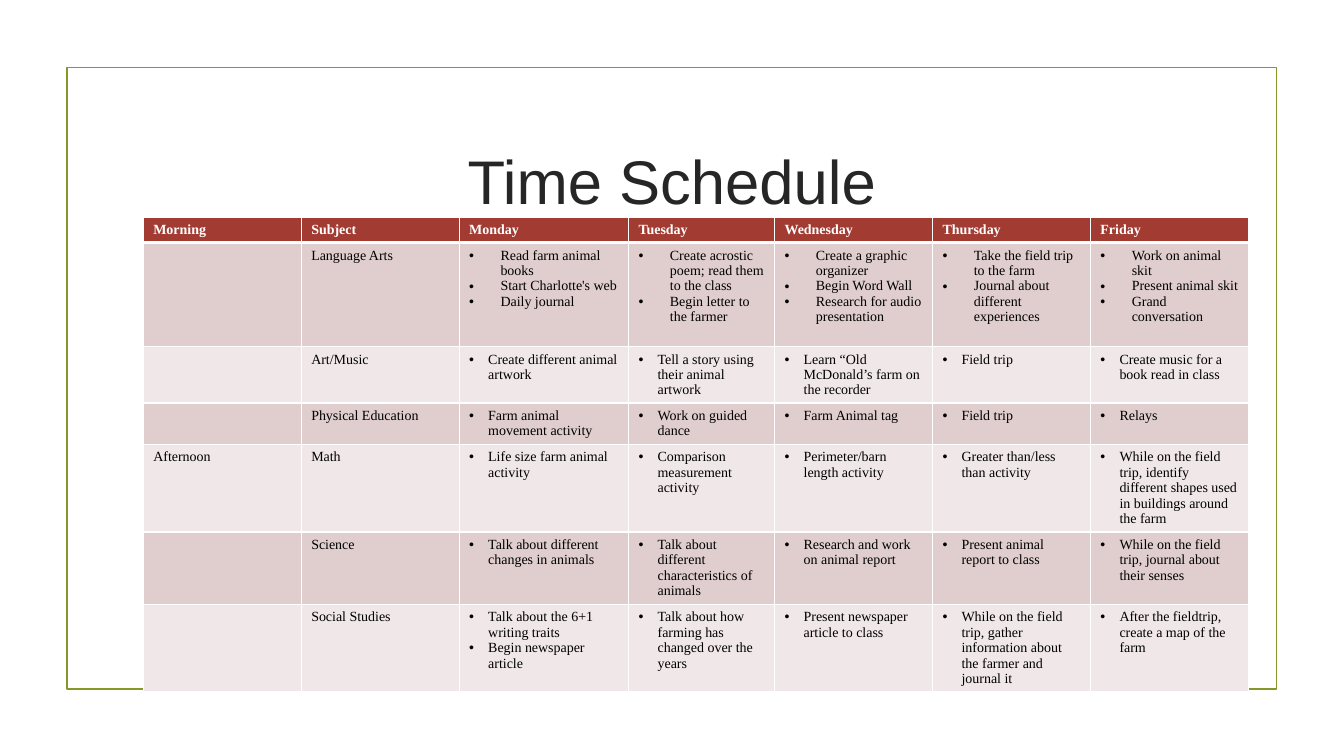
"""Build the weekly time schedule slide."""
from lxml.etree import SubElement
from pptx import Presentation
from pptx.dml.color import RGBColor
from pptx.enum.shapes import MSO_SHAPE as SHAPE
from pptx.enum.text import MSO_ANCHOR as ANCHOR, PP_ALIGN as ALIGN
from pptx.oxml.ns import qn
from pptx.util import Cm, Pt

GREEN = RGBColor(0x83, 0x99, 0x2A)
RED = RGBColor(0xA2, 0x3C, 0x33)
ROSE = RGBColor(0xE0, 0xCE, 0xCE)
PALE = RGBColor(0xF0, 0xE8, 0xE8)
WHITE = RGBColor(0xFF, 0xFF, 0xFF)
BLACK = RGBColor(0, 0, 0)
DARK = RGBColor(0x26, 0x26, 0x26)

COL_WIDTHS = [3.98, 3.98, 4.27, 3.68, 3.98, 3.98, 3.98]
ROW_HEIGHTS = [0.61, 2.62, 1.42, 1.04, 2.21, 1.82, 2.21]
SCHEDULE = [
    ["Morning", "Subject", "Monday", "Tuesday", "Wednesday", "Thursday", "Friday"],
    ["", "Language Arts",
     "Read farm animal books\nStart Charlotte's web\nDaily journal",
     "Create acrostic poem; read them to the class\nBegin letter to the farmer",
     "Create a graphic organizer\nBegin Word Wall\nResearch for audio presentation",
     "Take the field trip to the farm\nJournal about different experiences",
     "Work on animal skit\nPresent animal skit\nGrand conversation"],
    ["", "Art/Music",
     "Create different animal artwork",
     "Tell a story using their animal artwork",
     "Learn “Old McDonald’s farm on the recorder",
     "Field trip",
     "Create music for a book read in class"],
    ["", "Physical Education",
     "Farm animal movement activity",
     "Work on guided dance",
     "Farm Animal tag",
     "Field trip",
     "Relays"],
    ["Afternoon", "Math",
     "Life size farm animal activity",
     "Comparison measurement activity",
     "Perimeter/barn length activity",
     "Greater than/less than activity",
     "While on the field trip, identify different shapes used in buildings around the farm"],
    ["", "Science",
     "Talk about different changes in animals",
     "Talk about different characteristics of animals",
     "Research and work on animal report",
     "Present animal report to class",
     "While on the field trip, journal about their senses"],
    ["", "Social Studies",
     "Talk about the 6+1 writing traits\nBegin newspaper article",
     "Talk about how farming has changed over the years",
     "Present newspaper article to class",
     "While on the field trip, gather information about the farmer and journal it",
     "After the fieldtrip, create a map of the farm"],
]


def add_border(cell, side, width):
    ln = SubElement(cell._tc.get_or_add_tcPr(), qn(f"a:ln{side}"), w=str(Pt(width)))
    fill = SubElement(ln, qn("a:solidFill"))
    SubElement(fill, qn("a:srgbClr"), val=str(WHITE))


def add_bullet(p, indent):
    pPr = p._p.get_or_add_pPr()
    pPr.set("marL", str(Cm(indent)))
    pPr.set("indent", str(-Cm(indent)))
    SubElement(pPr, qn("a:buFont"), typeface="Arial")
    SubElement(pPr, qn("a:buChar"), char="•")


prs = Presentation()
prs.slide_width, prs.slide_height = Cm(33.87), Cm(19.05)
s = prs.slides.add_slide(prs.slide_layouts[5])

frame = s.shapes.add_shape(SHAPE.RECTANGLE, Cm(1.69), Cm(1.7), Cm(30.48), Cm(15.67))
frame.shadow.inherit = False
frame.fill.background()
frame.line.color.rgb = GREEN
frame.line.width = Pt(1.25)

title = s.shapes.title
title.left, title.top, title.width, title.height = Cm(3.6), Cm(2.72), Cm(26.67), Cm(3.63)
tf = title.text_frame
tf.word_wrap = True
tf.vertical_anchor = ANCHOR.MIDDLE
p = tf.paragraphs[0]
p.alignment = ALIGN.CENTER
r = p.add_run()
r.text = "Time Schedule"
r.font.name = "Arial"
r.font.size = Pt(44)
r.font.color.rgb = DARK

table = s.shapes.add_table(len(ROW_HEIGHTS), len(COL_WIDTHS), Cm(3.61), Cm(5.47),
                           Cm(sum(COL_WIDTHS)), Cm(sum(ROW_HEIGHTS))).table
for column, width in zip(table.columns, COL_WIDTHS):
    column.width = Cm(width)
for row, height in zip(table.rows, ROW_HEIGHTS):
    row.height = Cm(height)

for i, texts in enumerate(SCHEDULE):
    for j, text in enumerate(texts):
        cell = table.cell(i, j)
        for side in "LRTB":
            thick = (i == 0 and side == "B") or (i == 1 and side == "T")
            add_border(cell, side, 3 if thick else 1)
        cell.fill.solid()
        cell.fill.fore_color.rgb = RED if i == 0 else ROSE if i % 2 else PALE
        if not text:
            continue
        tf = cell.text_frame
        for k, line in enumerate(text.split("\n")):
            p = tf.add_paragraph() if k else tf.paragraphs[0]
            if i > 0 and j > 1:
                add_bullet(p, 0.79 if i == 1 else 0.48)
            r = p.add_run()
            r.text = line
            r.font.name = "Times New Roman"
            r.font.size = Pt(10)
            r.font.bold = i == 0
            r.font.color.rgb = BLACK if i else WHITE

prs.save("out.pptx")
